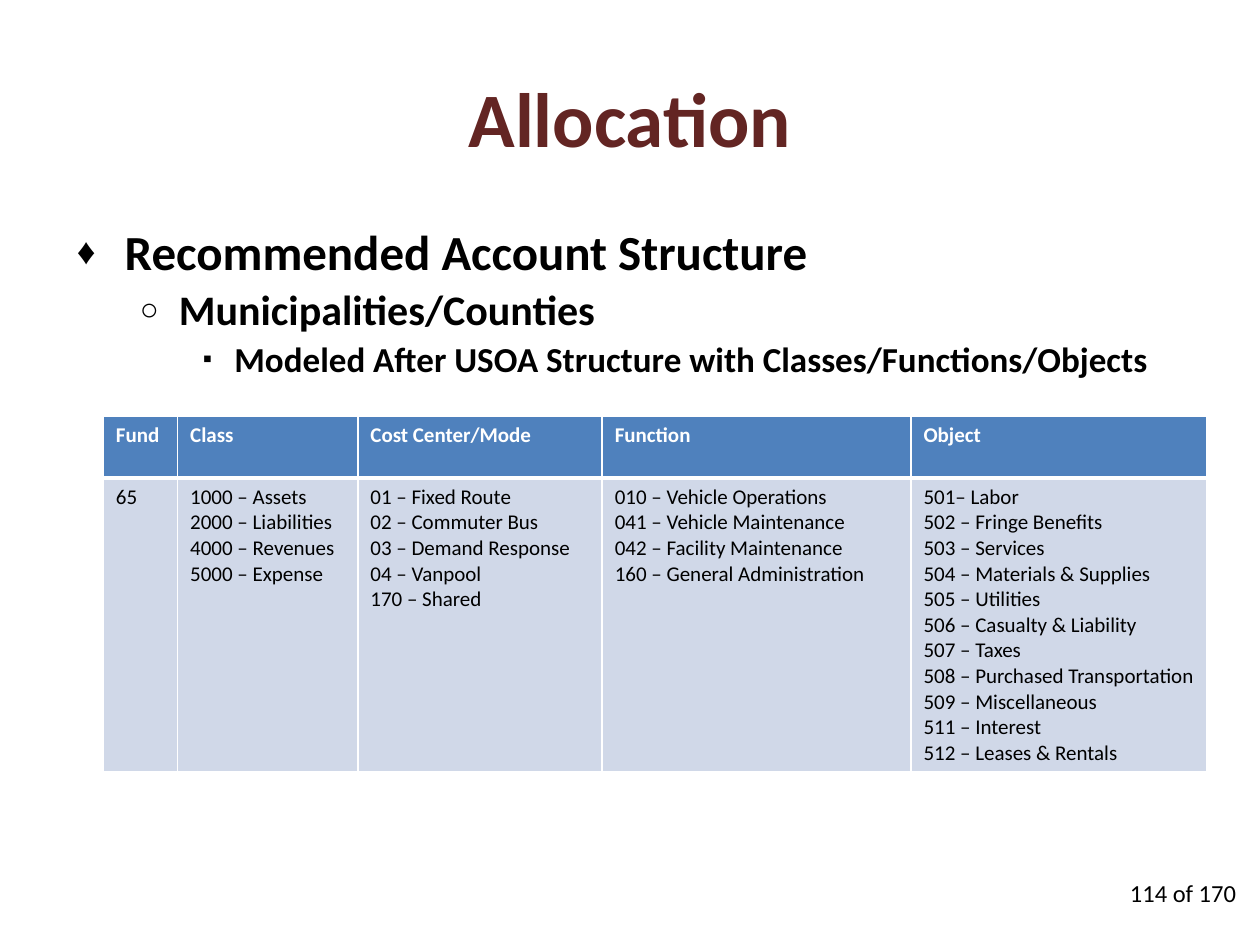
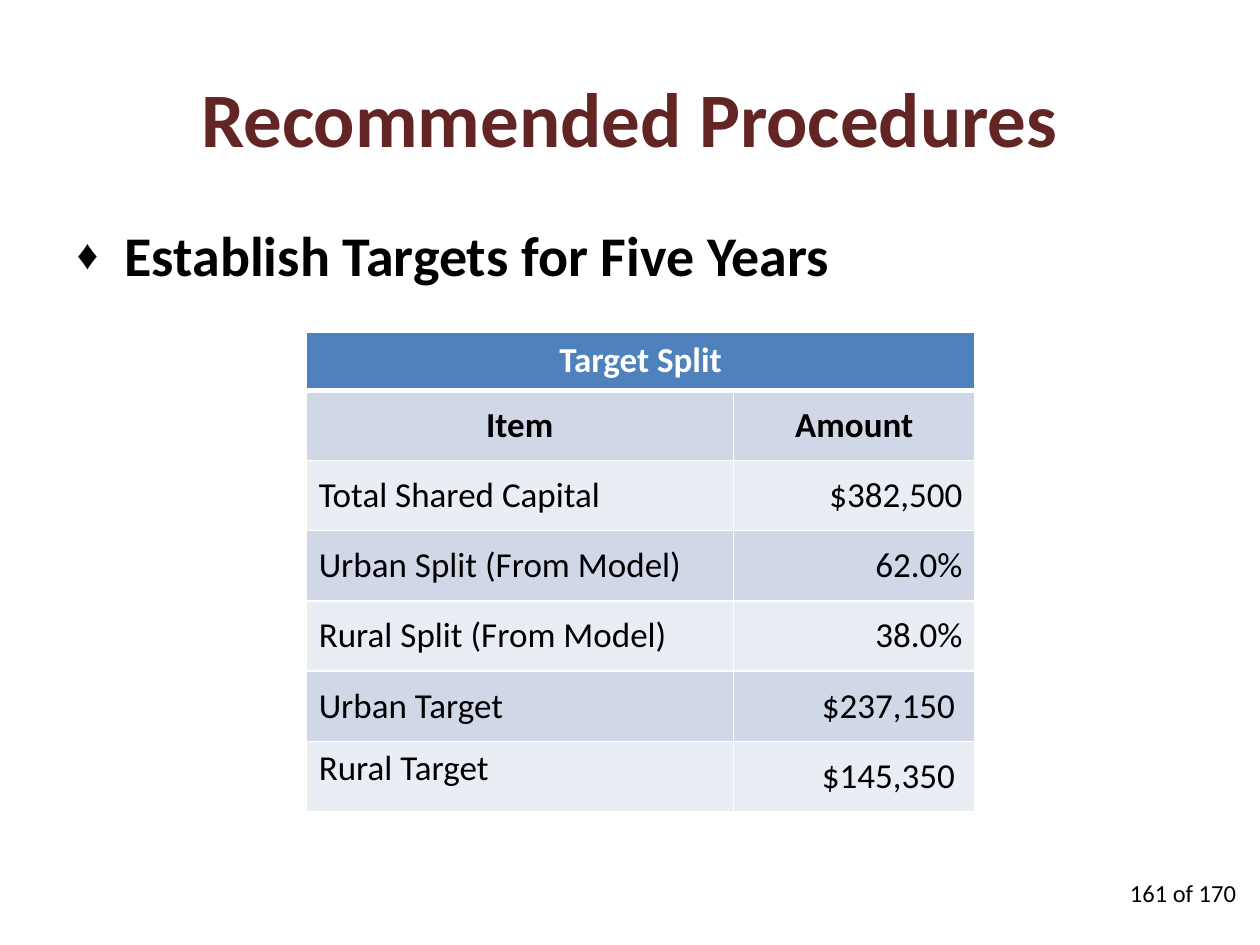
from lxml.etree import SubElement
from pptx import Presentation
from pptx.dml.color import RGBColor
from pptx.enum.text import MSO_ANCHOR as Anchor, MSO_AUTO_SIZE as AutoSize, PP_ALIGN as Align
from pptx.oxml.ns import qn
from pptx.util import Inches, Pt

WIDTH, HEIGHT = Inches(10), Inches(7.5)
FONT = "Calibri"
MAROON = RGBColor(0x63, 0x25, 0x23)
BLACK = RGBColor(0x00, 0x00, 0x00)
WHITE = RGBColor(0xFF, 0xFF, 0xFF)
BLUE = RGBColor(0x4F, 0x81, 0xBD)
BAND_DARK = RGBColor(0xD0, 0xD8, 0xE8)
BAND_LIGHT = RGBColor(0xE9, 0xED, 0xF4)
BULLETS = [("♦", 0.38, 0.38), ("○", 0.81, 0.31), ("▪", 1.25, 0.25)]
PAGE_COUNT = 170

ACCOUNT_WIDTHS = [5.9, 14.3, 19.4, 24.5, 23.5]
ACCOUNTS = {
    "Fund": ["65"],
    "Class": ["1000 – Assets", "2000 – Liabilities", "4000 – Revenues", "5000 – Expense"],
    "Cost Center/Mode": ["01 – Fixed Route", "02 – Commuter Bus", "03 – Demand Response",
                         "04 – Vanpool", "170 – Shared"],
    "Function": ["010 – Vehicle Operations", "041 – Vehicle Maintenance",
                 "042 – Facility Maintenance", "160 – General Administration"],
    "Object": ["501– Labor", "502 – Fringe Benefits", "503 – Services",
               "504 – Materials & Supplies", "505 – Utilities", "506 – Casualty & Liability",
               "507 – Taxes", "508 – Purchased Transportation", "509 – Miscellaneous",
               "511 – Interest", "512 – Leases & Rentals"],
}
TARGETS = [
    ("Total Shared Capital", "$382,500"),
    ("Urban Split (From Model)", "62.0%"),
    ("Rural Split (From Model)", "38.0%"),
    ("Urban Target", "$237,150"),
    ("Rural Target", "$145,350"),
]


def across(percent):
    return round(WIDTH * percent / 100)


def down(percent):
    return round(HEIGHT * percent / 100)


def place(shape, left, top, width, height):
    shape.left, shape.top = across(left), down(top)
    shape.width, shape.height = across(width), down(height)


def set_margins(frame):
    frame.margin_left = frame.margin_right = Inches(0.11)
    frame.margin_top = frame.margin_bottom = Inches(0.06)
    frame.auto_size = AutoSize.NONE
    frame.word_wrap = True


def write(paragraph, text, size, color=BLACK, bold=False, align=Align.LEFT):
    paragraph.alignment = align
    run = paragraph.add_run()
    run.text = text
    font = run.font
    font.name, font.size, font.bold = FONT, Pt(size), bold
    font.color.rgb = color


def add_bullet(paragraph, level):
    character, margin, hanging = BULLETS[level]
    paragraph.level = level
    properties = paragraph._p.get_or_add_pPr()
    properties.set("marL", str(Inches(margin)))
    properties.set("indent", str(-Inches(hanging)))
    SubElement(properties, qn("a:buSzPct")).set("val", "75000")
    SubElement(properties, qn("a:buChar")).set("char", character)


def write_list(body, items):
    frame = body.text_frame
    set_margins(frame)
    for level, (text, size) in enumerate(items):
        paragraph = frame.add_paragraph() if level else frame.paragraphs[0]
        add_bullet(paragraph, level)
        paragraph.line_spacing = 0.9
        paragraph.space_before = Pt(round(size * 0.2) if level else 0)
        write(paragraph, text, size, bold=True)


def add_slide(presentation, title, items, page):
    slide = presentation.slides.add_slide(presentation.slide_layouts[1])
    heading, body = slide.placeholders
    place(heading, 0, 4, 100, 16.67)
    set_margins(heading.text_frame)
    heading.text_frame.vertical_anchor = Anchor.MIDDLE
    write(heading.text_frame.paragraphs[0], title, 44, MAROON, bold=True, align=Align.CENTER)
    place(body, 5, 23.33, 92, 64)
    write_list(body, items)
    footer = slide.shapes.add_textbox(across(87.3), down(92.27), across(11.8), down(5.33))
    footer.text_frame.word_wrap = True
    write(footer.text_frame.paragraphs[0], f"{page} of {PAGE_COUNT}", 14, align=Align.RIGHT)
    return slide


def add_borders(cell, top, bottom):
    properties = cell._tc.get_or_add_tcPr()
    for side, points in (("L", 1), ("R", 1), ("T", top), ("B", bottom)):
        line = SubElement(properties, qn(f"a:ln{side}"), w=str(Pt(points)))
        fill = SubElement(line, qn("a:solidFill"))
        SubElement(fill, qn("a:srgbClr")).set("val", str(WHITE))


def add_table(slide, left, top, widths, heights):
    frame = slide.shapes.add_table(len(heights), len(widths), across(left), down(top),
                                   across(sum(widths)), down(sum(heights)))
    table = frame.table
    for column, width in zip(table.columns, widths):
        column.width = across(width)
    for index, (row, height) in enumerate(zip(table.rows, heights)):
        row.height = down(height)
        band = BAND_DARK if index % 2 else BAND_LIGHT
        for cell in row.cells:
            add_borders(cell, 3 if index == 1 else 1, 1 if index else 3)
            cell.fill.solid()
            cell.fill.fore_color.rgb = band if index else BLUE
    return table


def fill_cell(cell, lines, size, anchor=Anchor.TOP, **text_format):
    cell.vertical_anchor = anchor
    for index, line in enumerate(lines):
        frame = cell.text_frame
        paragraph = frame.add_paragraph() if index else frame.paragraphs[0]
        write(paragraph, line, size, **text_format)


def add_account_table(slide):
    table = add_table(slide, 8.2, 44, ACCOUNT_WIDTHS, [6.6, 31.1])
    for column, (header, accounts) in enumerate(ACCOUNTS.items()):
        fill_cell(table.cell(0, column), [header], 12, color=WHITE, bold=True)
        fill_cell(table.cell(1, column), accounts, 12)


def add_target_table(slide):
    heights = [6.1] + [7.43] * (len(TARGETS) + 1)
    table = add_table(slide, 24.3, 35.2, [33.9, 19.2], heights)
    table.cell(0, 0).merge(table.cell(0, 1))
    fill_cell(table.cell(0, 0), ["Target Split"], 20, color=WHITE, bold=True, align=Align.CENTER)
    for column, header in enumerate(("Item", "Amount")):
        fill_cell(table.cell(1, column), [header], 20, Anchor.MIDDLE,
                  bold=True, align=Align.CENTER)
    for row, (item, amount) in enumerate(TARGETS, start=2):
        is_last = row == len(TARGETS) + 1
        fill_cell(table.cell(row, 0), [item], 20, Anchor.TOP if is_last else Anchor.MIDDLE)
        amount_cell = table.cell(row, 1)
        fill_cell(amount_cell, [amount], 20, Anchor.MIDDLE, align=Align.RIGHT)
        if item.endswith("Target"):
            amount_cell.margin_right = Inches(0.16)


def main():
    presentation = Presentation()
    presentation.slide_width, presentation.slide_height = WIDTH, HEIGHT
    allocation = add_slide(presentation, "Allocation", [
        ("Recommended Account Structure", 28),
        ("Municipalities/Counties", 24),
        ("Modeled After USOA Structure with Classes/Functions/Objects", 20),
    ], 114)
    add_account_table(allocation)
    procedures = add_slide(presentation, "Recommended Procedures",
                           [("Establish Targets for Five Years", 32)], 161)
    add_target_table(procedures)
    presentation.save("out.pptx")


if __name__ == "__main__":
    main()
